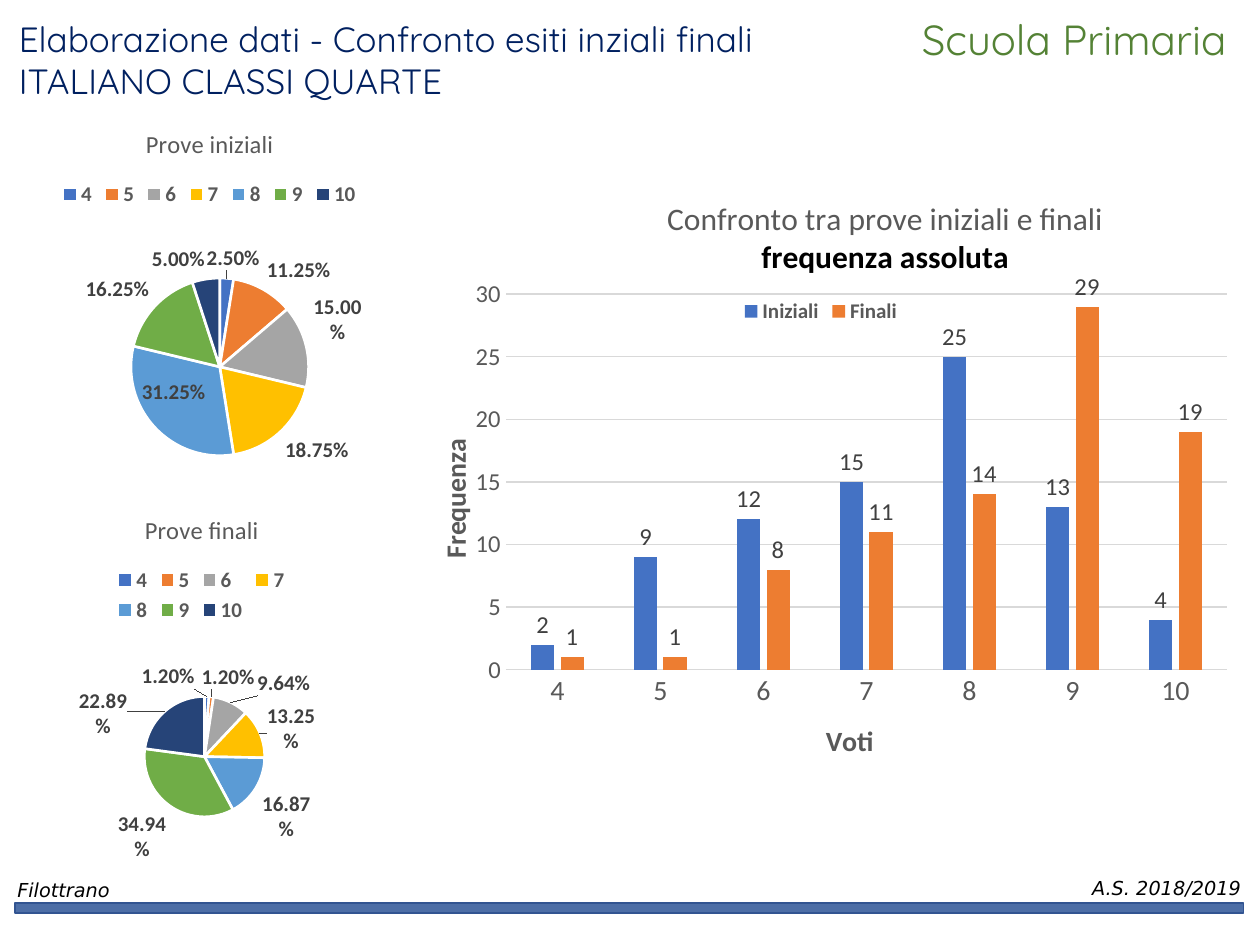
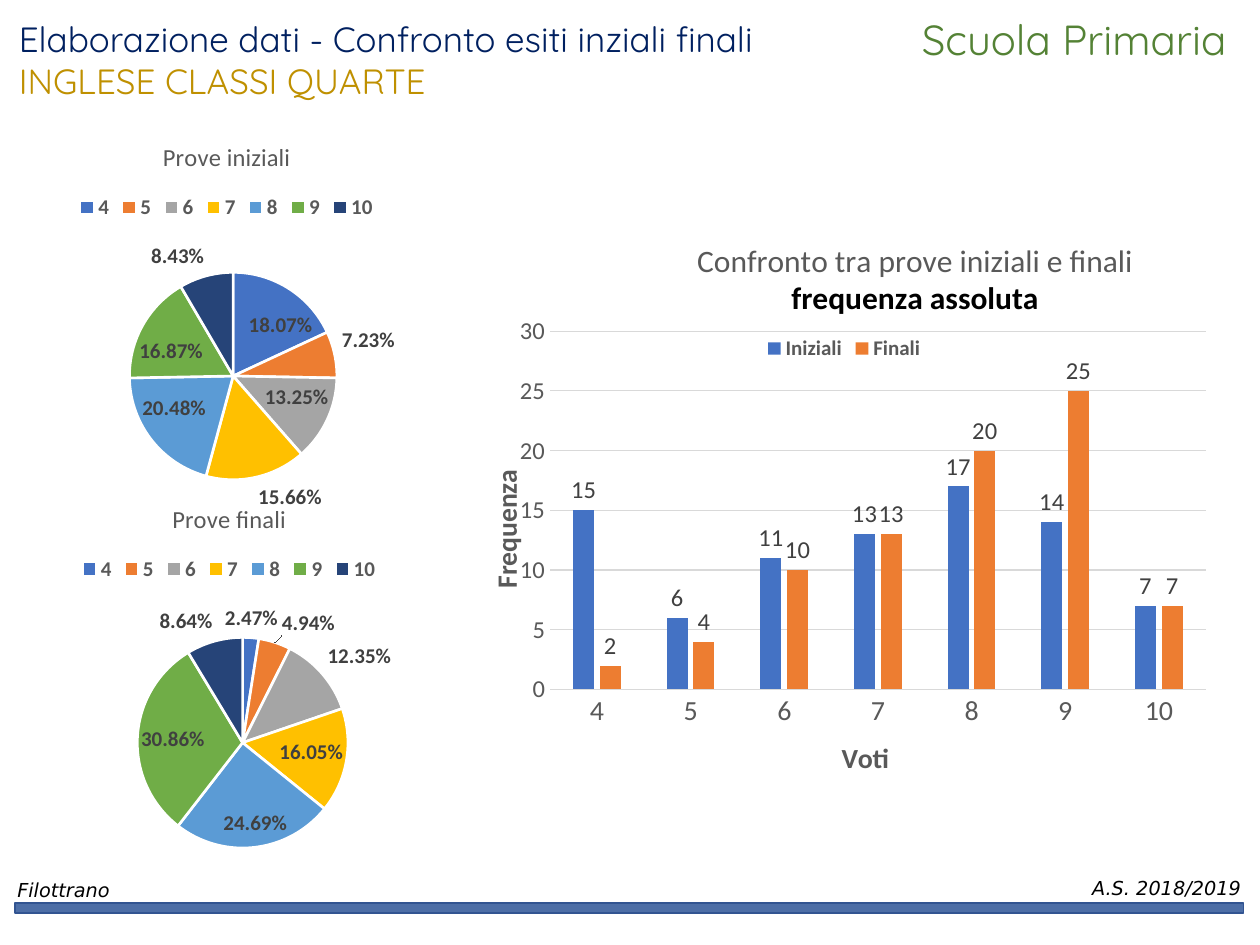
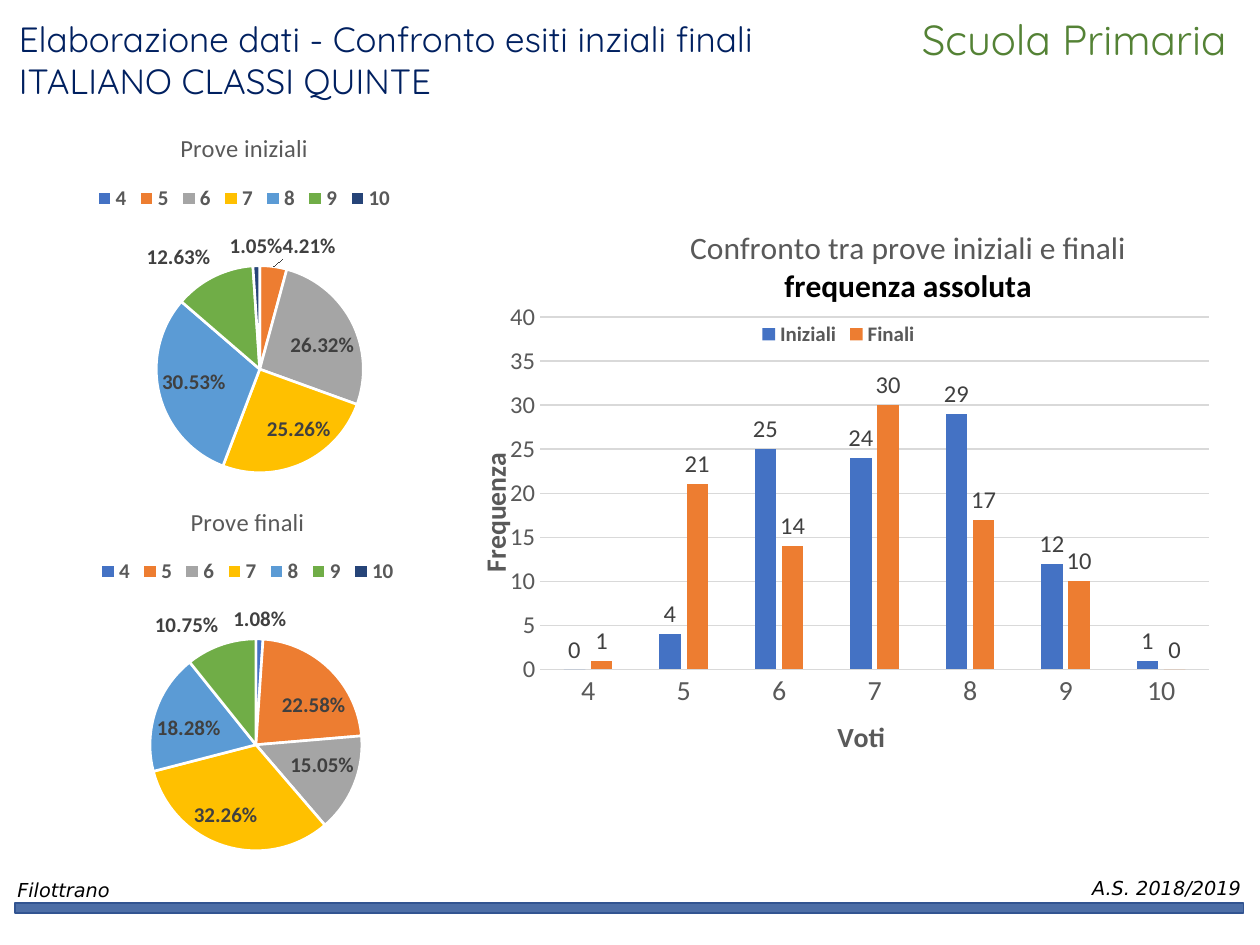
"""Builds three slides comparing initial and final test results of a primary school."""
from dataclasses import dataclass
from typing import Any, NamedTuple

from lxml import etree
from pptx import Presentation
from pptx import oxml
from pptx import slide as s
from pptx import util as u
from pptx.chart import chart as ch
from pptx.chart import data
from pptx.dml.color import RGBColor
from pptx.enum import chart as kinds
from pptx.enum import shapes, text
from pptx.oxml import ns


@dataclass(frozen=True)
class Theme:
    navy: str = "002060"
    gold: str = "BF9000"
    green: str = "548235"
    band: str = "2F5597"
    band_edge: str = "325491"
    black: str = "000000"
    white: str = "FFFFFF"
    grey: str = "595959"
    label: str = "404040"
    grid: str = "D9D9D9"
    palette: tuple[str, ...] = ("4472C4", "ED7D31", "A5A5A5", "FFC000", "5B9BD5", "70AD47", "264478")
    heading_font: str = "Quicksand"
    footer_font: str = "DejaVu Sans"
    chart_font: str = "Calibri"
    school_size: float = 24
    heading_size: float = 20
    footer_size: float = 11
    chart_title: float = 18
    pie_title: float = 14
    axis_size: float = 16
    value_size: float = 14
    small_size: float = 12
    base_size: float = 10


class Area(NamedTuple):
    left: float
    top: float
    width: float
    height: float

    def lengths(self) -> tuple[u.Length, ...]:
        return tuple(u.Cm(value) for value in self)


class Line(NamedTuple):
    words: str
    color: str
    size: float
    font: str
    bold: bool = False
    italic: bool = False


class Label(NamedTuple):
    area: Area
    lines: tuple[Line, ...]
    align: text.PP_ALIGN = text.PP_ALIGN.LEFT


class Results(NamedTuple):
    subject: str
    color: str
    top_mark: int
    initial: tuple[int, ...]
    final: tuple[int, ...]
    column_area: Area
    initial_area: Area
    final_area: Area


THEME = Theme()
MARKS = ("4", "5", "6", "7", "8", "9", "10")
BAND = Area(0.3, 18.21, 24.77, 0.2)
HEADING = Area(0.13, 0.23, 17.25, 1.96)
FRAME = (
    Label(Area(0.1, 17.58, 12.07, 0.74),
          (Line("Filottrano", THEME.black, THEME.footer_size, THEME.footer_font, italic=True),)),
    Label(Area(17.37, 17.55, 7.9, 0.74),
          (Line("A.S. 2018/2019", THEME.black, THEME.footer_size, THEME.footer_font, italic=True),),
          text.PP_ALIGN.RIGHT),
    Label(Area(17.91, 0.15, 7.49, 1.27),
          (Line("Scuola Primaria", THEME.green, THEME.school_size, THEME.heading_font),),
          text.PP_ALIGN.CENTER),
)
RESULTS = (
    Results("ITALIANO CLASSI QUARTE", THEME.navy, 30,
            (2, 9, 12, 15, 25, 13, 4), (1, 1, 8, 11, 14, 29, 19),
            Area(8.36, 3.56, 16.71, 11.91), Area(0.3, 2.18, 7.85, 8.15), Area(0.56, 9.96, 7.01, 7.95)),
    Results("INGLESE CLASSI QUARTE", THEME.gold, 30,
            (15, 6, 11, 13, 17, 14, 7), (2, 4, 10, 13, 20, 25, 7),
            Area(9.42, 4.42, 15.19, 11.4), Area(0, 2.44, 9.14, 8.2), Area(0.1, 9.73, 9.04, 8.36)),
    Results("ITALIANO CLASSI QUINTE", THEME.navy, 40,
            (0, 4, 25, 24, 29, 12, 1), (1, 21, 14, 30, 17, 10, 0),
            Area(9.19, 4.17, 15.49, 11.23), Area(0.64, 2.26, 8.56, 8.15), Area(-0.18, 9.78, 10.34, 8.31)),
)


def style(font: Any, color: str, size: float, name: str, bold: bool = False, italic: bool = False) -> None:
    font.name, font.size, font.bold, font.italic = name, u.Pt(size), bold, italic
    font.color.rgb = RGBColor.from_string(color)


def chart_style(font: Any, color: str, size: float, bold: bool = False) -> None:
    style(font, color, size, THEME.chart_font, bold)


def paint(fill: Any, color: str) -> None:
    fill.solid()
    fill.fore_color.rgb = RGBColor.from_string(color)


def draw_line(line: Any, color: str, width: float) -> None:
    line.color.rgb = RGBColor.from_string(color)
    line.width = u.Pt(width)


def write(frame: Any, lines: tuple[Line, ...], align: text.PP_ALIGN) -> None:
    for index, line in enumerate(lines):
        para = frame.add_paragraph() if index else frame.paragraphs[0]
        para.alignment = align
        para.add_run().text = line.words
        style(para.font, *line[1:])


def add_label(page: s.Slide, label: Label) -> None:
    frame = page.shapes.add_textbox(*label.area.lengths()).text_frame
    frame.word_wrap = True
    frame.auto_size = text.MSO_AUTO_SIZE.SHAPE_TO_FIT_TEXT
    write(frame, label.lines, label.align)


def add_frame(page: s.Slide, results: Results) -> None:
    band = page.shapes.add_shape(shapes.MSO_SHAPE.RECTANGLE, *BAND.lengths())
    band.shadow.inherit = False
    paint(band.fill, THEME.band)
    tint = next(band._element.spPr.iter(ns.qn("a:srgbClr")))
    etree.SubElement(tint, ns.qn("a:alpha"), val="85000")
    draw_line(band.line, THEME.band_edge, 1)
    heading = tuple(
        Line(words, color, THEME.heading_size, THEME.heading_font)
        for words, color in (("Elaborazione dati - Confronto esiti inziali finali", THEME.navy),
                             (results.subject, results.color))
    )
    for label in (*FRAME, Label(HEADING, heading)):
        add_label(page, label)


def place(element: Any, **shares: float) -> None:
    for old in element.findall(ns.qn("c:layout")):
        element.remove(old)
    target = '<c:layoutTarget val="inner"/>' if "w" in shares else ""
    modes = "".join(f'<c:{key}Mode val="edge"/>' for key in "xy")
    values = "".join(f'<c:{key} val="{share}"/>' for key, share in shares.items())
    layout = oxml.parse_xml(
        f'<c:layout {ns.nsdecls("c")}><c:manualLayout>{target}{modes}{values}</c:manualLayout></c:layout>'
    )
    overlay = element.find(ns.qn("c:overlay"))
    anchor = element[0] if overlay is None else overlay
    anchor.addprevious(layout)


def add_chart(page: s.Slide, kind: kinds.XL_CHART_TYPE, area: Area,
              series: dict[str, tuple[float, ...]], title: tuple[Line, ...]) -> ch.Chart:
    table = data.CategoryChartData()
    table.categories = MARKS
    for name, values in series.items():
        table.add_series(name, values)
    chart = page.shapes.add_chart(kind, *area.lengths(), table).chart
    chart_style(chart.font, THEME.black, THEME.base_size)
    chart.has_title = True
    write(chart.chart_title.text_frame, title, text.PP_ALIGN.CENTER)
    chart.has_legend = True
    chart.legend.position = kinds.XL_LEGEND_POSITION.TOP
    chart.legend.include_in_layout = False
    chart_style(chart.legend.font, THEME.grey, THEME.small_size, True)
    return chart


def show_values(series: Any, position: kinds.XL_LABEL_POSITION, size: float, bold: bool) -> Any:
    labels = series.data_labels
    labels.show_value = True
    labels.position = position
    chart_style(labels.font, THEME.label, size, bold)
    return labels


def style_axis(axis: Any, title: str, size: float, x: float, y: float) -> None:
    axis.major_tick_mark = axis.minor_tick_mark = kinds.XL_TICK_MARK.NONE
    chart_style(axis.tick_labels.font, THEME.grey, size)
    line = Line(title, THEME.grey, THEME.axis_size, THEME.chart_font, True)
    write(axis.axis_title.text_frame, (line,), text.PP_ALIGN.CENTER)
    place(axis.axis_title._element, x=x, y=y)


def add_columns(page: s.Slide, results: Results) -> None:
    title = (
        Line("Confronto tra prove iniziali e finali", THEME.grey, THEME.chart_title, THEME.chart_font),
        Line("frequenza assoluta", THEME.black, THEME.chart_title, THEME.chart_font, True),
    )
    chart = add_chart(page, kinds.XL_CHART_TYPE.COLUMN_CLUSTERED, results.column_area,
                      {"Iniziali": results.initial, "Finali": results.final}, title)
    place(chart.chart_title._element, x=0.3, y=0.03)
    place(chart.legend._element, x=0.39, y=0.2)
    place(chart._chartSpace.chart.plotArea, x=0.11, y=0.2, w=0.87, h=0.64)
    style_axis(chart.category_axis, "Voti", THEME.axis_size, 0.49, 0.92)
    draw_line(chart.category_axis.format.line, THEME.grid, 0.75)
    axis = chart.value_axis
    style_axis(axis, "Frequenza", THEME.value_size, 0.02, 0.44)
    axis.format.line.fill.background()
    axis.minimum_scale, axis.maximum_scale, axis.major_unit = 0, results.top_mark, 5
    draw_line(axis.major_gridlines.format.line, THEME.grid, 0.75)
    plot = chart.plots[0]
    plot.vary_by_categories = False
    plot.gap_width, plot.overlap = 219, -27
    for series, color in zip(plot.series, THEME.palette):
        paint(series.format.fill, color)
        show_values(series, kinds.XL_LABEL_POSITION.OUTSIDE_END, THEME.value_size, False)


def add_pie(page: s.Slide, name: str, counts: tuple[int, ...], area: Area) -> None:
    shares = tuple(round(count / sum(counts), 4) for count in counts)
    title = (Line(name, THEME.grey, THEME.pie_title, THEME.chart_font),)
    chart = add_chart(page, kinds.XL_CHART_TYPE.PIE, area, {"Series 1": shares}, title)
    plot = chart.plots[0]
    plot.vary_by_categories = True
    series = plot.series[0]
    for index, color in enumerate(THEME.palette):
        point = series.points[index].format
        paint(point.fill, color)
        draw_line(point.line, THEME.white, 1.5)
    labels = show_values(series, kinds.XL_LABEL_POSITION.BEST_FIT, THEME.small_size, True)
    labels.number_format = "0.00%;;"
    labels.number_format_is_linked = False


def main() -> None:
    deck = Presentation()
    deck.slide_width, deck.slide_height = u.Cm(25.4), u.Cm(19.05)
    for results in RESULTS:
        page = deck.slides.add_slide(deck.slide_layouts[6])
        add_frame(page, results)
        add_columns(page, results)
        add_pie(page, "Prove iniziali", results.initial, results.initial_area)
        add_pie(page, "Prove finali", results.final, results.final_area)
    deck.save("out.pptx")


if __name__ == "__main__":
    main()
